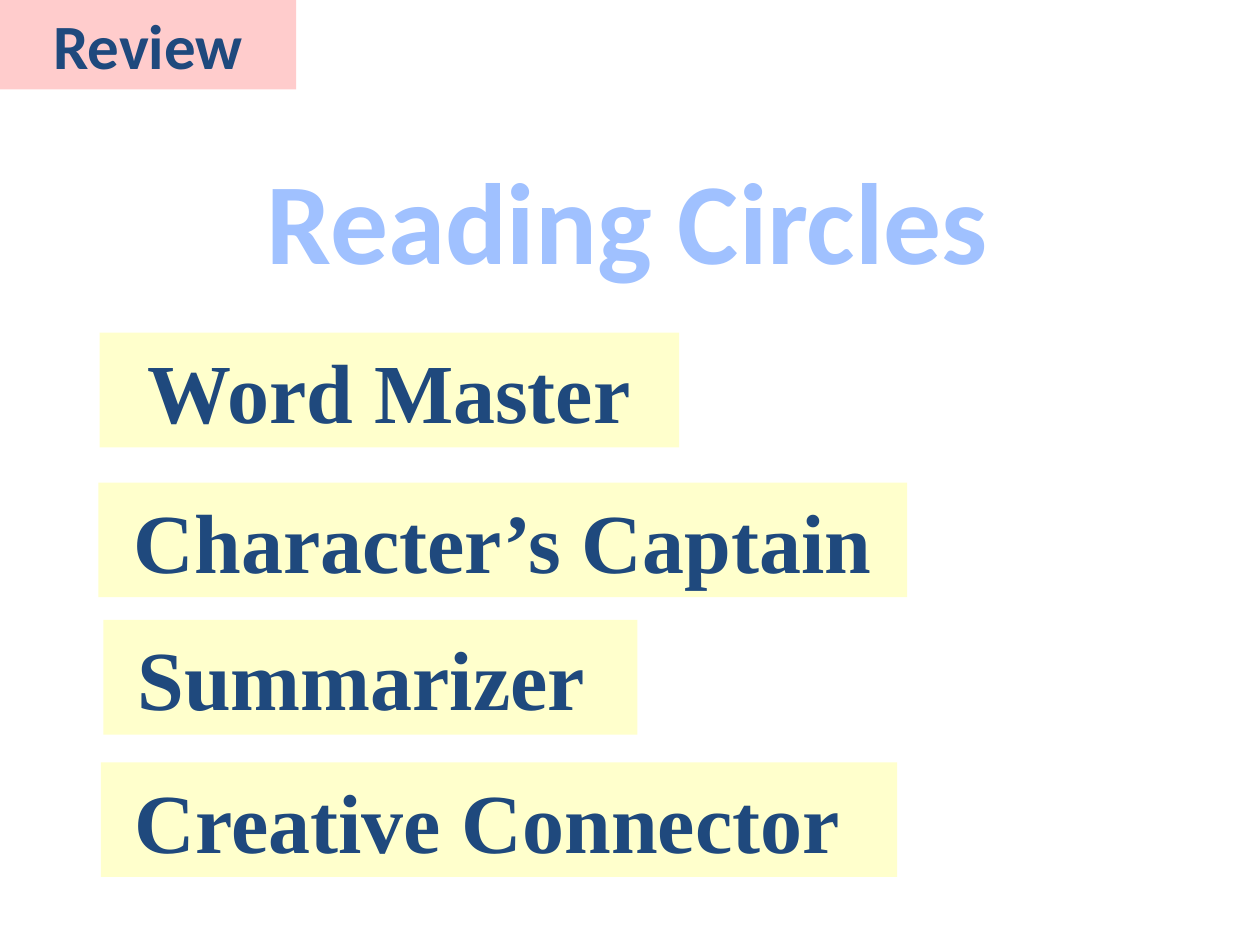
from pptx import Presentation
from pptx.dml.color import RGBColor
from pptx.enum.shapes import MSO_SHAPE as Shape
from pptx.enum.text import MSO_ANCHOR as Anchor, MSO_AUTO_SIZE as AutoSize, PP_ALIGN as Align
from pptx.util import Inches, Pt

NAVY = "1F497D"
SKY = "A0C1FF"
PINK = "FFCCCC"
CREAM = "FFFFCC"

ROLE_HEIGHT = 0.91
ROLES = [
    ("Word Master", 0.79, 2.64, 4.6, Align.CENTER),
    ("Character’s Captain", 0.78, 3.83, 6.42, Align.CENTER),
    ("Summarizer", 0.82, 4.92, 4.24, Align.LEFT),
    ("Creative Connector", 0.8, 6.05, 6.32, Align.LEFT),
]


def color(hex_string):
    return RGBColor.from_string(hex_string)


def write_text(shape, text, font_name, size, hex_string, alignment=Align.CENTER):
    frame = shape.text_frame
    frame.text = text
    frame.auto_size = AutoSize.NONE
    frame.vertical_anchor = Anchor.MIDDLE
    paragraph = frame.paragraphs[0]
    paragraph.alignment = alignment
    font = paragraph.font
    font.name = font_name
    font.size = Pt(size)
    font.bold = True
    font.color.rgb = color(hex_string)


def add_title(slide, left, top, width, height):
    title = slide.shapes.title
    title.left, title.top = Inches(left), Inches(top)
    title.width, title.height = Inches(width), Inches(height)
    write_text(title, "Reading Circles", "Calibri", 66, SKY)
    title.text_frame.word_wrap = False


def add_panel(slide, left, top, width, height, fill):
    panel = slide.shapes.add_shape(
        Shape.RECTANGLE, Inches(left), Inches(top), Inches(width), Inches(height)
    )
    panel.shadow.inherit = False
    panel.fill.solid()
    panel.fill.fore_color.rgb = color(fill)
    panel.line.fill.background()
    return panel


def add_review_tag(slide, left, top, width, height):
    tag = add_panel(slide, left, top, width, height, PINK)
    write_text(tag, "Review", "Calibri", 36, NAVY)


def add_role(slide, left, top, width, height, text, alignment):
    role = add_panel(slide, left, top, width, height, CREAM)
    write_text(role, text, "Times New Roman", 48, NAVY, alignment)
    if alignment == Align.LEFT:
        role.text_frame.margin_left = Inches(0.27)


def main():
    presentation = Presentation()
    presentation.slide_width = Inches(10)
    presentation.slide_height = Inches(7.5)
    slide = presentation.slides.add_slide(presentation.slide_layouts[5])
    add_title(slide, 1.99, 1.13, 5.98, 1.21)
    add_review_tag(slide, 0, 0, 2.35, 0.71)
    for text, left, top, width, alignment in ROLES:
        add_role(slide, left, top, width, ROLE_HEIGHT, text, alignment)
    presentation.save("out.pptx")


if __name__ == "__main__":
    main()
